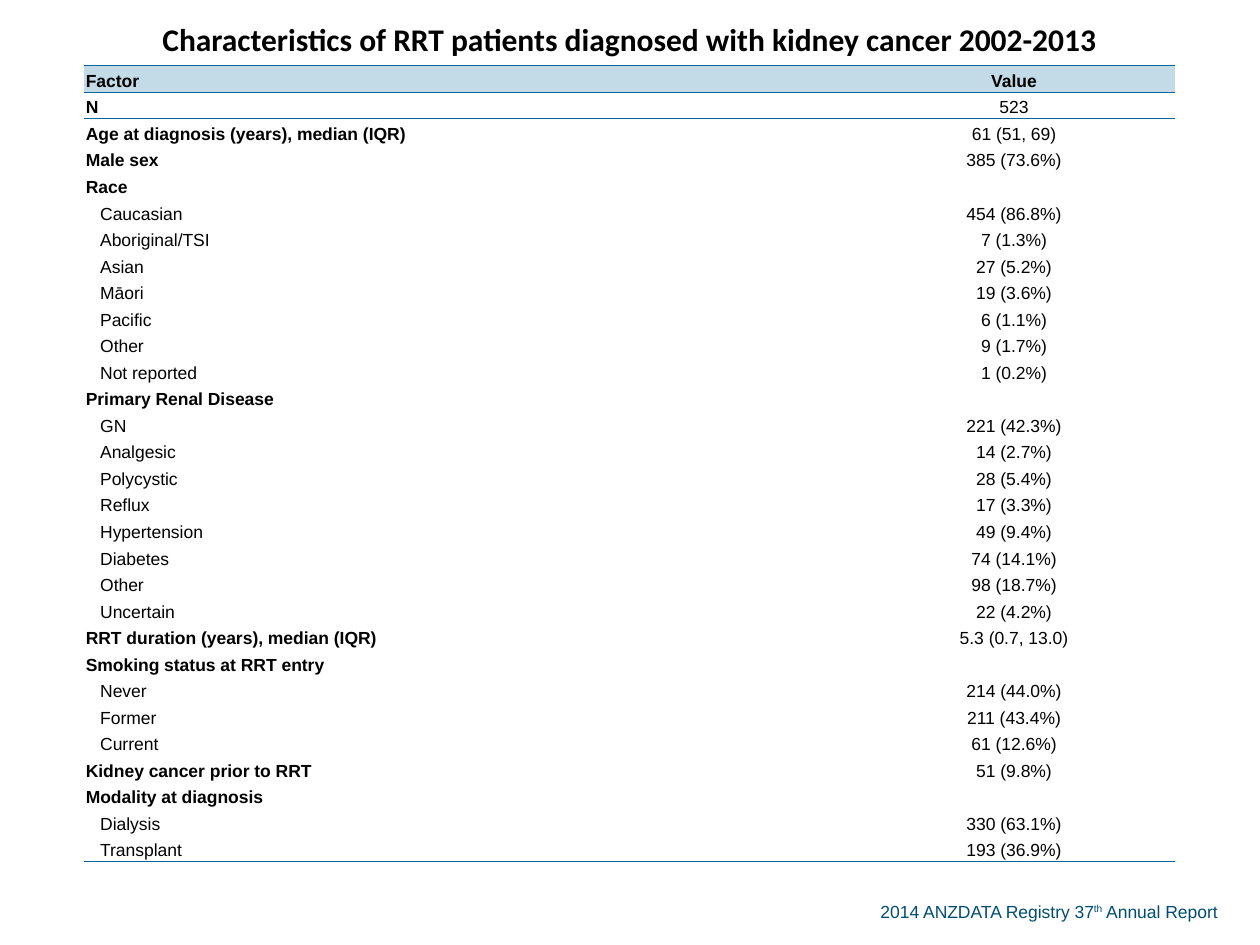
from typing import NamedTuple

from lxml import etree
from pptx import Presentation
from pptx.dml.color import RGBColor
from pptx.enum.text import MSO_ANCHOR, MSO_AUTO_SIZE, PP_ALIGN
from pptx.oxml.ns import qn
from pptx.util import Cm, Pt

LEFT, CENTER = PP_ALIGN.LEFT, PP_ALIGN.CENTER
MIDDLE = MSO_ANCHOR.MIDDLE
FIT_SHAPE = MSO_AUTO_SIZE.SHAPE_TO_FIT_TEXT

BLACK, RULE_BLUE, HEADER_BLUE, FOOTER_BLUE = "000000", "006699", "C2DBE7", "004D73"
PLAIN_TABLE_STYLE = "{2D5ABB26-0587-4C30-8999-92F81FD0307C}"
TITLE = "Characteristics of RRT patients diagnosed with kidney cancer 2002-2013"
TITLE_HEIGHT, ROW_HEIGHT = Cm(1.19), Cm(0.49)
COLUMN_WIDTHS = (Cm(15.49), Cm(6.5))
SUBROW_INDENT = Cm(0.29)
CELL_INSET = Cm(0.03)


class Factor(NamedTuple):
    """A table row; subrows are indented and not bold."""
    label: str
    value: str = ""
    subrow: bool = False


class TextStyle(NamedTuple):
    """The look of a run."""
    size: float = 10
    bold: bool = False
    color: str = BLACK
    font: str = "Arial"
    baseline: int = 0


FACTORS = (
    Factor("N", "523"),
    Factor("Age at diagnosis (years), median (IQR)", "61 (51, 69)"),
    Factor("Male sex", "385 (73.6%)"),
    Factor("Race"),
    Factor("Caucasian", "454 (86.8%)", True),
    Factor("Aboriginal/TSI", "7 (1.3%)", True),
    Factor("Asian", "27 (5.2%)", True),
    Factor("Māori", "19 (3.6%)", True),
    Factor("Pacific", "6 (1.1%)", True),
    Factor("Other", "9 (1.7%)", True),
    Factor("Not reported", "1 (0.2%)", True),
    Factor("Primary Renal Disease"),
    Factor("GN", "221 (42.3%)", True),
    Factor("Analgesic", "14 (2.7%)", True),
    Factor("Polycystic", "28 (5.4%)", True),
    Factor("Reflux", "17 (3.3%)", True),
    Factor("Hypertension", "49 (9.4%)", True),
    Factor("Diabetes", "74 (14.1%)", True),
    Factor("Other", "98 (18.7%)", True),
    Factor("Uncertain", "22 (4.2%)", True),
    Factor("RRT duration (years), median (IQR)", "5.3 (0.7, 13.0)"),
    Factor("Smoking status at RRT entry"),
    Factor("Never", "214 (44.0%)", True),
    Factor("Former", "211 (43.4%)", True),
    Factor("Current", "61 (12.6%)", True),
    Factor("Kidney cancer prior to RRT", "51 (9.8%)"),
    Factor("Modality at diagnosis"),
    Factor("Dialysis", "330 (63.1%)", True),
    Factor("Transplant", "193 (36.9%)", True),
)

REGULAR, BOLD = TextStyle(), TextStyle(bold=True)
TITLE_STYLE = TextStyle(18, True, font="Calibri")
FOOTER_STYLE = TextStyle(color=FOOTER_BLUE)


def rgb(color: str) -> RGBColor:
    """Turn a hex string into a colour."""
    return RGBColor.from_string(color)


def add_run(paragraph, text: str, style: TextStyle) -> None:
    """Append one styled run to a paragraph."""
    run = paragraph.add_run()
    run.text = text
    run.font.size = Pt(style.size)
    run.font.bold = style.bold
    run.font.name = style.font
    run.font.color.rgb = rgb(style.color)
    if style.baseline:
        run.font._element.set("baseline", str(style.baseline))


def add_border(cell, side: str) -> None:
    """Rule one side of a cell, lnT or lnB."""
    line = etree.SubElement(cell._tc.get_or_add_tcPr(), qn(f"a:{side}"), w=str(Pt(0.5)))
    fill = etree.SubElement(line, qn("a:solidFill"))
    etree.SubElement(fill, qn("a:srgbClr"), val=RULE_BLUE)


def fill_cell(cell, text: str, style: TextStyle, alignment: PP_ALIGN,
              indent: int = 0, borders: tuple[str, ...] = (), fill: str = "") -> None:
    """Write and format one table cell."""
    cell.vertical_anchor = MIDDLE
    cell.margin_left = cell.margin_right = cell.margin_top = CELL_INSET
    cell.margin_bottom = 0
    for side in borders:
        add_border(cell, side)
    if fill:
        cell.fill.solid()
        cell.fill.fore_color.rgb = rgb(fill)
    else:
        cell.fill.background()
    paragraph = cell.text_frame.paragraphs[0]
    paragraph.alignment = alignment
    paragraph.line_spacing = 1.19
    paragraph.space_after = Pt(14)
    if indent:
        paragraph._p.get_or_add_pPr().set("marL", str(indent))
    if text:
        add_run(paragraph, text, style)
    else:
        paragraph._p.get_or_add_endParaRPr().set("sz", str(style.size * 100))


def add_factor_table(slide) -> None:
    """Draw the title row, the header row and all factors."""
    row_count = len(FACTORS) + 2
    height = TITLE_HEIGHT + ROW_HEIGHT * (row_count - 1)
    shape = slide.shapes.add_table(row_count, 2, Cm(1.7), Cm(0.13), sum(COLUMN_WIDTHS), height)
    table = shape.table
    table.first_row = table.horz_banding = False
    table._tbl.tblPr.find(qn("a:tableStyleId")).text = PLAIN_TABLE_STYLE
    for column, width in zip(table.columns, COLUMN_WIDTHS):
        column.width = width
    for row in table.rows:
        row.height = ROW_HEIGHT
    table.rows[0].height = TITLE_HEIGHT

    table.cell(0, 0).merge(table.cell(0, 1))
    fill_cell(table.cell(0, 0), TITLE, TITLE_STYLE, CENTER, borders=("lnB",))
    for column, (text, alignment) in enumerate((("Factor", LEFT), ("Value", CENTER))):
        fill_cell(table.cell(1, column), text, BOLD, alignment,
                  borders=("lnT", "lnB"), fill=HEADER_BLUE)
    for row, factor in enumerate(FACTORS, start=2):
        borders = {2: ("lnT",), row_count - 1: ("lnB",)}.get(row, ())
        label_style = REGULAR if factor.subrow else BOLD
        indent = SUBROW_INDENT if factor.subrow else 0
        fill_cell(table.cell(row, 0), factor.label, label_style, LEFT, indent, borders)
        fill_cell(table.cell(row, 1), factor.value, REGULAR, CENTER, borders=borders)


def add_footer(slide) -> None:
    """Name the report at the bottom right."""
    shape = slide.shapes.add_textbox(Cm(17.5), Cm(18.03), Cm(7.6), Cm(0.68))
    shape.text_frame.word_wrap = True
    shape.text_frame.auto_size = FIT_SHAPE
    paragraph = shape.text_frame.paragraphs[0]
    add_run(paragraph, "2014 ANZDATA Registry 37", FOOTER_STYLE)
    add_run(paragraph, "th", FOOTER_STYLE._replace(baseline=30000))
    add_run(paragraph, " Annual Report", FOOTER_STYLE)


def main() -> None:
    """Build and save the presentation."""
    presentation = Presentation()
    presentation.slide_width, presentation.slide_height = Cm(25.4), Cm(19.05)
    slide = presentation.slides.add_slide(presentation.slide_layouts[6])
    add_footer(slide)
    add_factor_table(slide)
    presentation.save("out.pptx")


if __name__ == "__main__":
    main()
